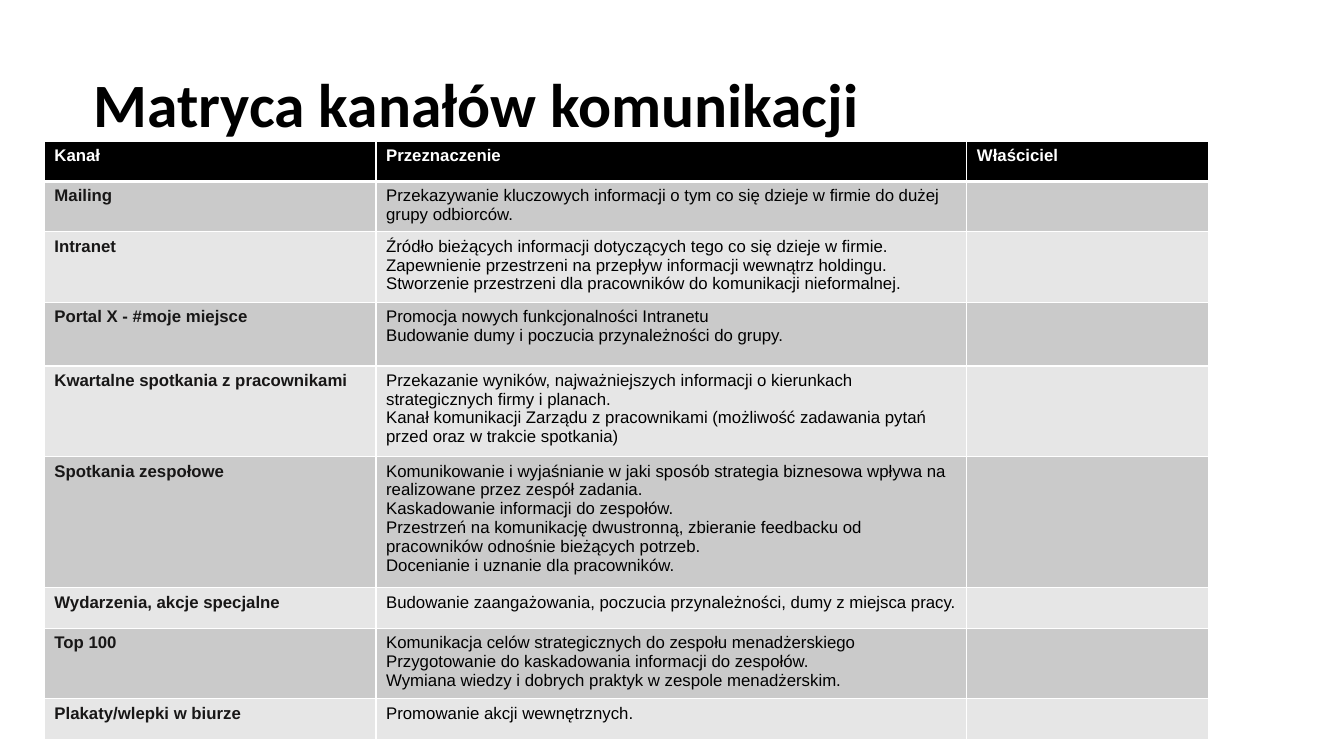
from lxml import etree
from pptx import Presentation
from pptx.dml.color import RGBColor
from pptx.enum.text import MSO_ANCHOR
from pptx.oxml.ns import qn
from pptx.util import Inches, Pt

# Content
TITLE = "Matryca kanałów komunikacji"
HEADER = ("Kanał", "Przeznaczenie", "Właściciel")
# Channel, row height in inches, purposes (one paragraph each)
CHANNELS = [
    ("Mailing", 0.48, [
        "Przekazywanie kluczowych informacji o tym co się dzieje w firmie do dużej grupy odbiorców."]),
    ("Intranet", 0.66, [
        "Źródło bieżących informacji dotyczących tego co się dzieje w firmie.",
        "Zapewnienie przestrzeni na przepływ informacji wewnątrz holdingu.",
        "Stworzenie przestrzeni dla pracowników do komunikacji nieformalnej."]),
    ("Portal X - #moje miejsce", 0.63, [
        "Promocja nowych funkcjonalności Intranetu",
        "Budowanie dumy i poczucia przynależności do grupy."]),
    ("Kwartalne spotkania z pracownikami", 0.84, [
        "Przekazanie wyników, najważniejszych informacji o kierunkach strategicznych firmy i planach.",
        "Kanał komunikacji Zarządu z pracownikami (możliwość zadawania pytań przed oraz w trakcie spotkania)"]),
    ("Spotkania zespołowe", 1.22, [
        "Komunikowanie i wyjaśnianie w jaki sposób strategia biznesowa wpływa na realizowane przez zespół zadania.",
        "Kaskadowanie informacji do zespołów.\vPrzestrzeń na komunikację dwustronną, zbieranie feedbacku "
        "od pracowników odnośnie bieżących potrzeb.",
        "Docenianie i uznanie dla pracowników."]),
    ("Wydarzenia, akcje specjalne", 0.4, [
        "Budowanie zaangażowania, poczucia przynależności, dumy z miejsca pracy."]),
    ("Top 100", 0.66, [
        "Komunikacja celów strategicznych do zespołu menadżerskiego",
        "Przygotowanie do kaskadowania informacji do zespołów.",
        "Wymiana wiedzy i dobrych praktyk w zespole menadżerskim."]),
    ("Plakaty/wlepki w biurze", 0.4, ["Promowanie akcji wewnętrznych."]),
]

HEADER_HEIGHT = 0.4
COLUMN_WIDTHS = (3.29, 5.86, 2.4)

BLACK = RGBColor(0x00, 0x00, 0x00)
WHITE = RGBColor(0xFF, 0xFF, 0xFF)
INK = RGBColor(0x18, 0x17, 0x17)
BANDS = (RGBColor(0xCA, 0xCA, 0xCA), RGBColor(0xE6, 0xE6, 0xE6))


def set_font(paragraph, name, size, color, bold):
    for run in paragraph.runs:
        run.font.name = name
        run.font.size = Pt(size)
        run.font.color.rgb = color
        run.font.bold = bold


def set_borders(cell, top=1, bottom=1):
    properties = cell._tc.get_or_add_tcPr()
    for side, width in (("L", 1), ("R", 1), ("T", top), ("B", bottom)):
        line = etree.SubElement(properties, qn(f"a:ln{side}"), w=str(Pt(width)))
        fill = etree.SubElement(line, qn("a:solidFill"))
        etree.SubElement(fill, qn("a:srgbClr"), val=str(WHITE))


def fill_cell(cell, text, color, bold, background):
    cell.fill.solid()
    cell.fill.fore_color.rgb = background
    cell.text_frame.text = text
    for paragraph in cell.text_frame.paragraphs:
        set_font(paragraph, "Arial", 12, color, bold)


prs = Presentation()
prs.slide_width, prs.slide_height = Inches(13.33), Inches(7.5)
slide = prs.slides.add_slide(prs.slide_layouts[6])

# Title
title = slide.shapes.add_textbox(Inches(0.83), Inches(0.64), Inches(11.5), Inches(0.85)).text_frame
title.word_wrap = True
title.vertical_anchor = MSO_ANCHOR.MIDDLE
title.text = TITLE
title.paragraphs[0].line_spacing = 0.9
set_font(title.paragraphs[0], "Calibri", 44, BLACK, True)

# Channel matrix
heights = [HEADER_HEIGHT] + [height for _, height, _ in CHANNELS]
matrix = slide.shapes.add_table(
    len(heights), len(HEADER), Inches(0.44), Inches(1.4),
    Inches(sum(COLUMN_WIDTHS)), Inches(sum(heights))).table
for column, width in zip(matrix.columns, COLUMN_WIDTHS):
    column.width = Inches(width)
for row, height in zip(matrix.rows, heights):
    row.height = Inches(height)

# Header row, with a thick rule below it
for col, heading in enumerate(HEADER):
    set_borders(matrix.cell(0, col), bottom=3)
    fill_cell(matrix.cell(0, col), heading, WHITE, True, BLACK)

# Banded channel rows; the owner column stays empty
for row, (channel, _, purposes) in enumerate(CHANNELS, start=1):
    band = BANDS[(row - 1) % 2]
    for col, text in enumerate((channel, "\n".join(purposes), "")):
        cell = matrix.cell(row, col)
        set_borders(cell, top=3 if row == 1 else 1)
        fill_cell(cell, text, INK if col == 0 else BLACK, col == 0, band)

prs.save("out.pptx")
